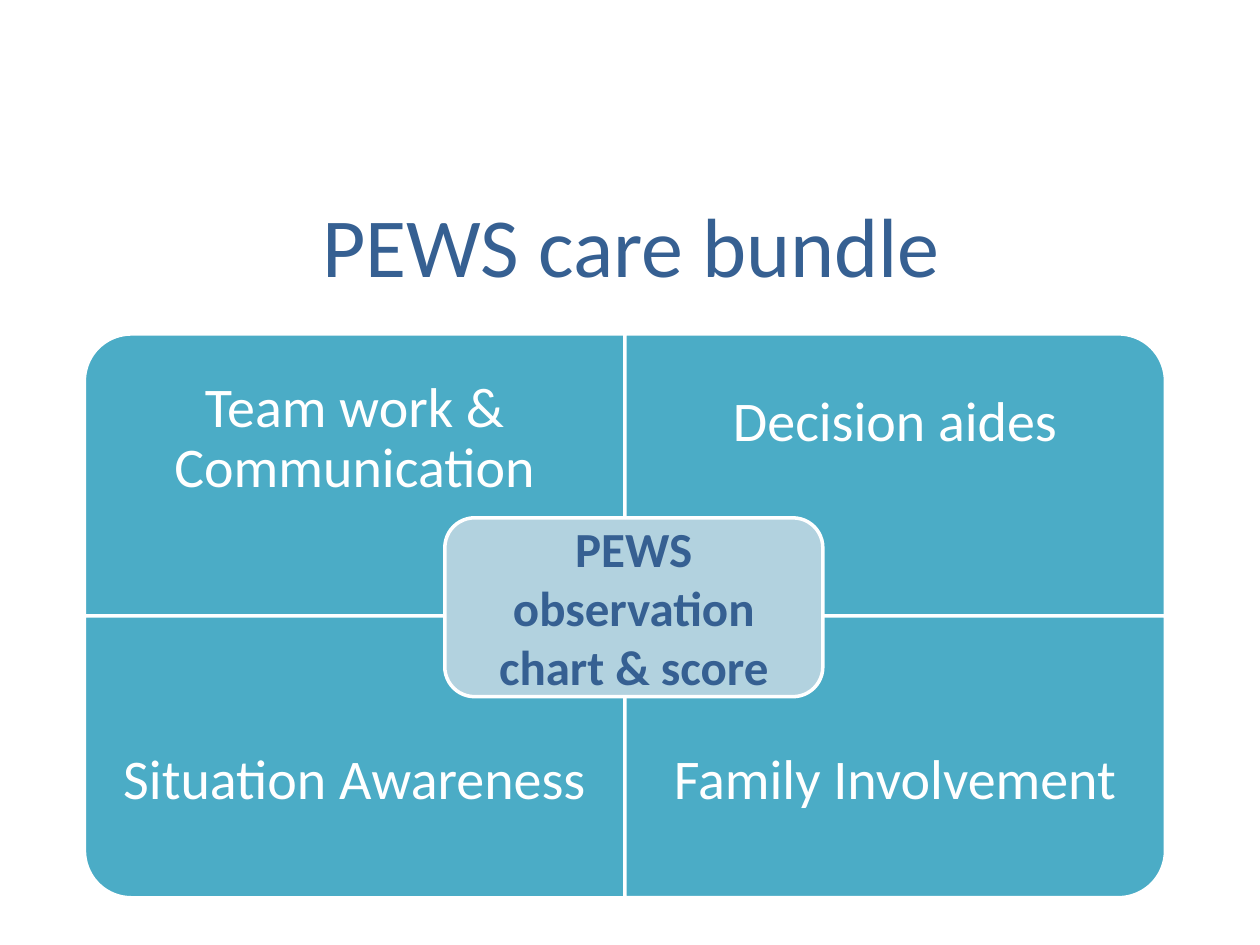
from pptx import Presentation
from pptx.dml.color import RGBColor
from pptx.enum.shapes import MSO_SHAPE
from pptx.enum.text import MSO_ANCHOR, PP_ALIGN
from pptx.util import Pt

COLORS = {"navy": "366092", "teal": "4BACC6", "pale": "B2D2DF", "white": "FFFFFF"}
LEFT, TOP, WIDE, HIGH = 48.2, 190.8, 308.9, 161.1
LABEL = 0.75 * HIGH
PAD = 18


class Board:
    def __init__(self, slide, font="Calibri"):
        self.slide = slide
        self.font = font

    def color(self, name):
        return RGBColor.from_string(COLORS[name])

    def letter(self, shape, lines, size, color, bold=False, pads=None, space=1.0):
        """Fill a shape with centred, styled lines of text."""
        frame = shape.text_frame
        frame.word_wrap = True
        frame.vertical_anchor = MSO_ANCHOR.MIDDLE
        if pads:
            (frame.margin_left, frame.margin_top,
             frame.margin_right, frame.margin_bottom) = map(Pt, pads)
        frame.text = "\n".join(lines)
        for para in frame.paragraphs:
            para.alignment = PP_ALIGN.CENTER
            para.line_spacing = space
            font = para.font
            font.name, font.size, font.bold = self.font, Pt(size), bold
            font.color.rgb = self.color(color)

    def title(self, text, *box):
        shape = self.slide.shapes.title
        shape.left, shape.top, shape.width, shape.height = map(Pt, box)
        self.letter(shape, [text], 48, "navy")

    def panel(self, kind, fill, *box):
        shape = self.slide.shapes.add_shape(kind, *map(Pt, box))
        shape.shadow.inherit = False
        shape.fill.solid()
        shape.fill.fore_color.rgb = self.color(fill)
        shape.line.color.rgb = self.color("white")
        shape.line.width = Pt(2)
        return shape

    def quarter(self, col, row, turn, text, lift):
        """Draw one quarter, its round corner outward, its label raised by lift."""
        x, y = LEFT + col * WIDE, TOP + row * HIGH
        w, h = (HIGH, WIDE) if turn % 180 else (WIDE, HIGH)
        shape = self.panel(MSO_SHAPE.ROUND_1_RECTANGLE, "teal",
                           x + (WIDE - w) / 2, y + (HIGH - h) / 2, w, h)
        shape.rotation = turn
        label = self.slide.shapes.add_textbox(
            Pt(x), Pt(y + row * (HIGH - LABEL)), Pt(WIDE), Pt(LABEL))
        self.letter(label, [text], 32, "white", space=0.9,
                    pads=(PAD, PAD, PAD, PAD + 2 * lift))

    def center(self, lines, *box):
        shape = self.panel(MSO_SHAPE.ROUNDED_RECTANGLE, "pale", *box)
        self.letter(shape, lines, 28, "navy", bold=True, pads=(13.5, 0, 13.5, 0))


def main():
    deck = Presentation()
    deck.slide_width, deck.slide_height = Pt(720), Pt(540)
    board = Board(deck.slides.add_slide(deck.slide_layouts[5]))
    board.title("PEWS care bundle", 36.7, 94.3, 648, 90)
    for part in (
        (0, 0, 270, "Team work & Communication", 0),
        (1, 0, 0, "Decision aides", 9),
        (0, 1, 180, "Situation Awareness", 6),
        (1, 1, 90, "Family Involvement", 6),
    ):
        board.quarter(*part)
    board.center(["PEWS", "observation chart & score"], 254.2, 295.9, 216, 102.2)
    deck.save("out.pptx")


if __name__ == "__main__":
    main()
